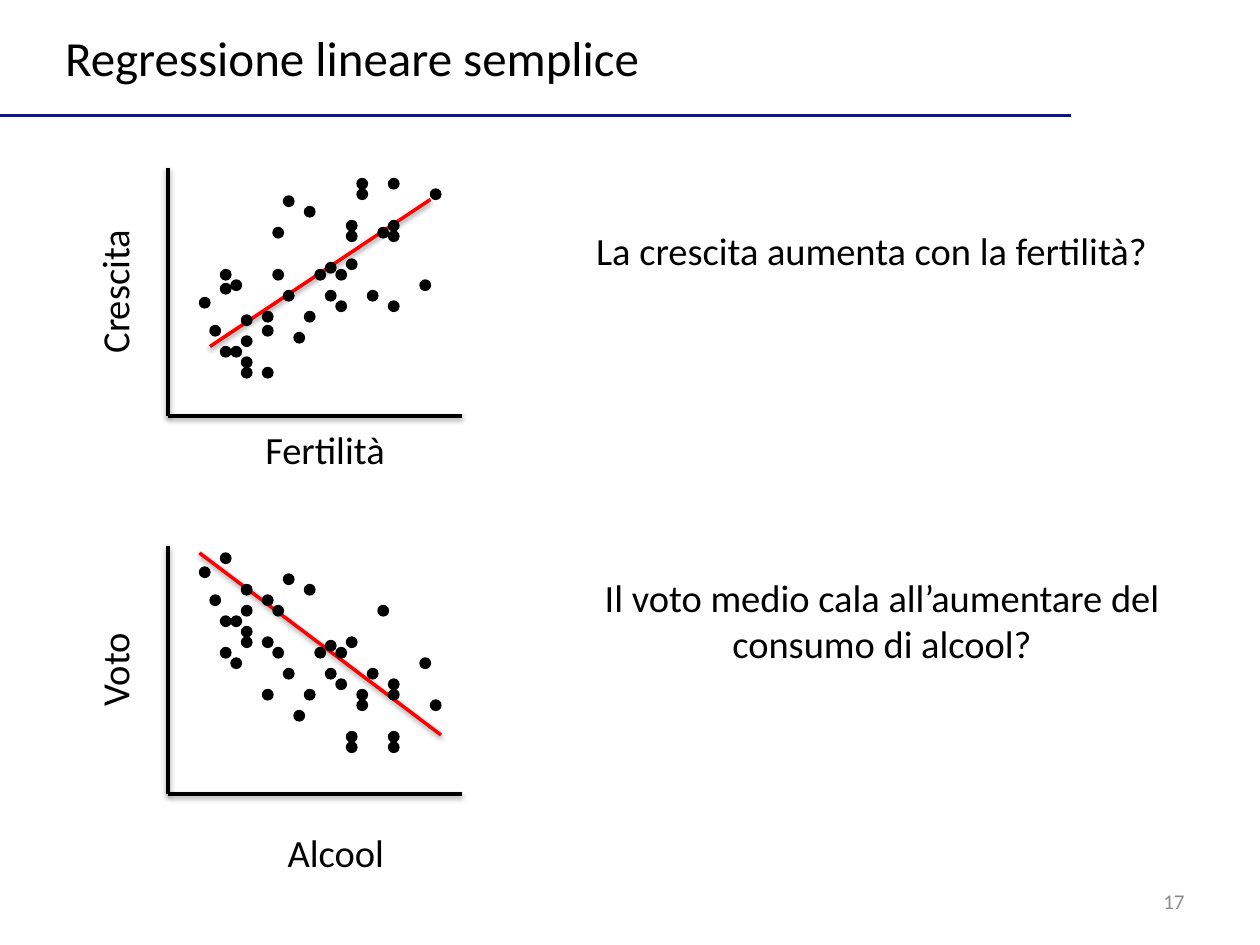
"""Build a slide on simple linear regression with two scatter sketches."""
from lxml import etree
from pptx import Presentation
from pptx.dml.color import RGBColor
from pptx.enum.shapes import MSO_CONNECTOR, MSO_SHAPE
from pptx.enum.text import MSO_ANCHOR, MSO_AUTO_SIZE, PP_ALIGN
from pptx.oxml.ns import qn
from pptx.util import Pt

LEFT, CENTER, RIGHT = PP_ALIGN.LEFT, PP_ALIGN.CENTER, PP_ALIGN.RIGHT
MIDDLE = MSO_ANCHOR.MIDDLE
GROW, FIXED = MSO_AUTO_SIZE.SHAPE_TO_FIT_TEXT, MSO_AUTO_SIZE.NONE
STRAIGHT, OVAL = MSO_CONNECTOR.STRAIGHT, MSO_SHAPE.OVAL

BLACK = RGBColor(0x00, 0x00, 0x00)
RED = RGBColor(0xFF, 0x00, 0x00)
NAVY = RGBColor(0x0C, 0x12, 0x90)
GRAY = RGBColor(0x8C, 0x8C, 0x8C)

FONT = "Calibri"
AXIS_LEFT, AXIS_WIDTH, AXIS_HEIGHT = 96, 168, 141.6
DOT_SIZE, COLUMN_STEP = 6, 6

TITLE = ("Regressione lineare semplice", (30, 12, 345.6, 41))
PAGE_NUMBER = ("17", (516, 500.4, 168, 28.8))

PLOTS = [
    {
        "top": 96,
        "trend": ((24, 102), (150, 18)),
        "x_label": ("Fertilità", (144, 240, 83.5, 33.8)),
        "y_label": ("Crescita", (22.3, 149.8, 85.7, 33.8)),
        "question": ("La crescita aumenta con la fertilità?", (324, 126, 348, 33.8)),
        "dots": {
            3: [74], 4: [90], 5: [58, 66, 102], 6: [64, 102],
            7: [84, 96, 108, 114], 9: [82, 90, 114], 10: [34, 58], 11: [16, 70],
            12: [94], 13: [22, 82], 14: [58], 15: [54, 70], 16: [58, 76],
            17: [30, 36, 52], 18: [6, 12], 19: [70], 20: [34],
            21: [6, 30, 36, 76], 24: [64], 25: [12],
        },
    },
    {
        "top": 312,
        "trend": ((18, 4), (156, 108)),
        "x_label": ("Alcool", (157, 470.2, 69.8, 33.8)),
        "y_label": ("Voto", (36.7, 365.8, 56.9, 33.8)),
        "question": ("Il voto medio cala all’aumentare del consumo di alcool?",
                     (330, 324, 348, 60.5)),
        "dots": {
            3: [12], 4: [28], 5: [4, 40, 58], 6: [40, 64],
            7: [22, 34, 46, 52], 9: [28, 52, 82], 10: [34, 58], 11: [16, 70],
            12: [94], 13: [22, 82], 14: [58], 15: [54, 70], 16: [58, 76],
            17: [52, 106, 112], 18: [82, 88], 19: [70], 20: [34],
            21: [76, 82, 106, 112], 24: [64], 25: [88],
        },
    },
]


def write(box, text, size, color=BLACK, align=CENTER, wrap=False, fit=GROW):
    frame = box.text_frame
    frame_format = {"word_wrap": wrap, "auto_size": fit, "vertical_anchor": MIDDLE}
    for name, value in frame_format.items():
        setattr(frame, name, value)
    para = frame.paragraphs[0]
    para.alignment = align
    span = para.add_run()
    span.text = text
    for name, value in {"name": FONT, "size": Pt(size)}.items():
        setattr(span.font, name, value)
    span.font.color.rgb = color


def add_text(page, text, place, size=22, **text_format):
    box = page.shapes.add_textbox(*map(Pt, place))
    write(box, text, size, **text_format)
    return box


def add_line(page, start, end, color, shadow=True):
    line = page.shapes.add_connector(STRAIGHT, *map(Pt, (*start, *end)))
    line.line.color.rgb = color
    line.line.width = Pt(2)
    effects = etree.SubElement(line._element.spPr, qn("a:effectLst"))
    if shadow:
        outer = etree.SubElement(effects, qn("a:outerShdw"), blurRad=str(Pt(3.1)),
                                 dist=str(Pt(1.6)), dir="5400000", rotWithShape="0")
        tint = etree.SubElement(outer, qn("a:srgbClr"), val=str(BLACK))
        etree.SubElement(tint, qn("a:alpha"), val="38000")


def add_dot(page, left, top):
    dot = page.shapes.add_shape(OVAL, *map(Pt, (left, top, DOT_SIZE, DOT_SIZE)))
    dot.shadow.inherit = False
    dot.fill.solid()
    dot.fill.fore_color.rgb = BLACK
    dot.line.color.rgb = BLACK
    dot.line.width = Pt(0.75)


def add_plot(page, plot):
    top = plot["top"]
    origin = (AXIS_LEFT, top + AXIS_HEIGHT)
    trend = [(AXIS_LEFT + x, top + y) for x, y in plot["trend"]]
    add_line(page, *trend, RED)
    add_line(page, origin, (AXIS_LEFT, top), BLACK)
    add_line(page, origin, (AXIS_LEFT + AXIS_WIDTH, origin[1]), BLACK)
    add_text(page, *plot["x_label"])
    add_text(page, *plot["y_label"]).rotation = 270
    for column, offsets in plot["dots"].items():
        for offset in offsets:
            add_dot(page, AXIS_LEFT + column * COLUMN_STEP, top + offset)
    add_text(page, *plot["question"], wrap=True)


def main():
    deck = Presentation()
    deck.slide_width, deck.slide_height = Pt(720), Pt(540)
    page = deck.slides.add_slide(deck.slide_layouts[5])
    title = page.shapes.title
    text, place = TITLE
    for name, value in zip(("left", "top", "width", "height"), place):
        setattr(title, name, Pt(value))
    write(title, text, 28, align=LEFT)
    add_line(page, (0, 66), (612, 66), NAVY, shadow=False)
    for plot in PLOTS:
        add_plot(page, plot)
    add_text(page, *PAGE_NUMBER, size=12, color=GRAY, align=RIGHT, wrap=True, fit=FIXED)
    deck.save("out.pptx")


if __name__ == "__main__":
    main()
